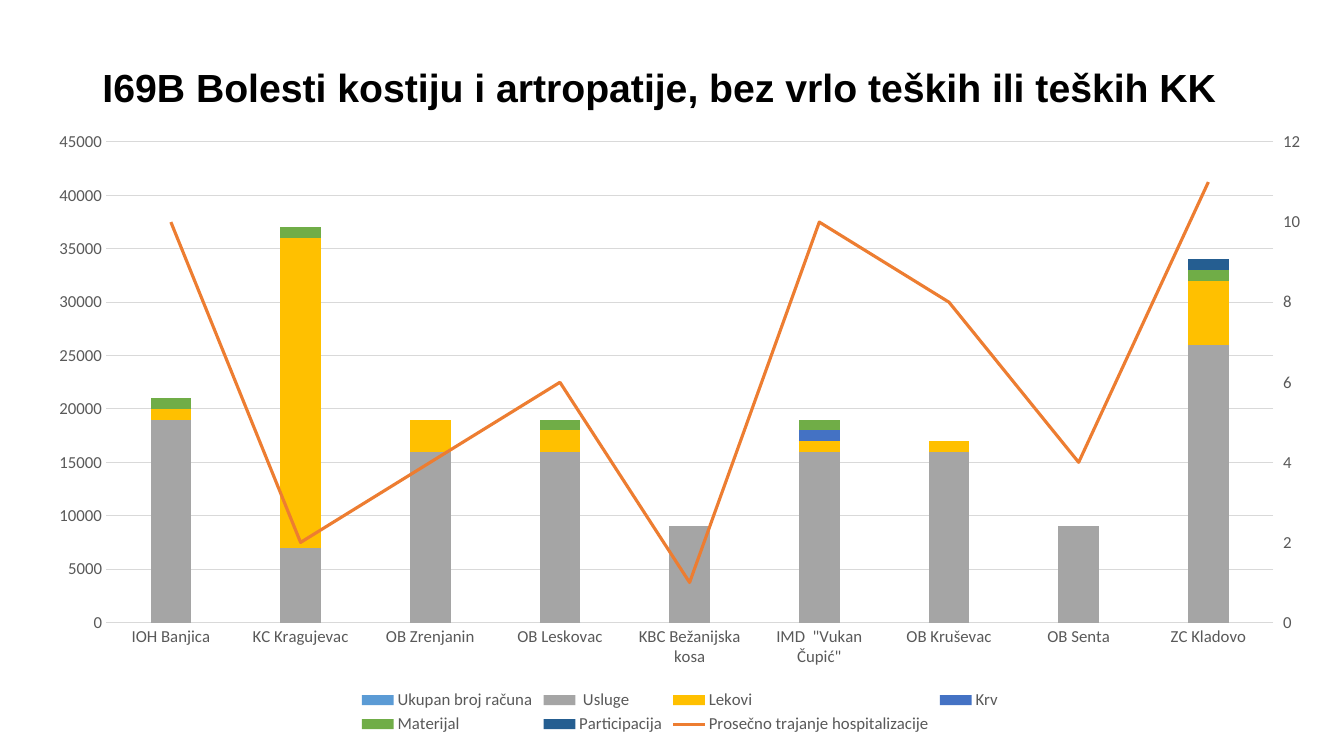
from copy import deepcopy

from lxml import etree
from pptx import Presentation
from pptx.chart.data import CategoryChartData
from pptx.dml.color import RGBColor
from pptx.enum.chart import XL_CHART_TYPE, XL_LEGEND_POSITION, XL_MARKER_STYLE, XL_TICK_MARK
from pptx.enum.text import MSO_ANCHOR, PP_ALIGN
from pptx.util import Emu, Pt

STACKED = XL_CHART_TYPE.COLUMN_STACKED
LEGEND_BOTTOM = XL_LEGEND_POSITION.BOTTOM
NO_MARKER = XL_MARKER_STYLE.NONE
NO_TICK = XL_TICK_MARK.NONE
MIDDLE = MSO_ANCHOR.MIDDLE
LEFT = PP_ALIGN.LEFT

EMU_PER_PX = 9525
CHART_NS = "http://schemas.openxmlformats.org/drawingml/2006/chart"
LABEL_GREY = "595959"
RULE_GREY = "D9D9D9"

HOSPITALS = ["IOH Banjica", "KC Kragujevac", "OB Zrenjanin", "OB Leskovac",
             "KBC Bežanijska kosa", 'IMD  "Vukan Čupić"', "OB Kruševac",
             "OB Senta", "ZC Kladovo"]
COSTS = [
    ("Ukupan broj računa", "5B9BD5", [0, 0, 0, 0, 0, 0, 0, 0, 0]),
    (" Usluge", "A5A5A5", [19000, 7000, 16000, 16000, 9000, 16000, 16000, 9000, 26000]),
    ("Lekovi", "FFC000", [1000, 29000, 3000, 2000, 0, 1000, 1000, 0, 6000]),
    ("Krv", "4472C4", [0, 0, 0, 0, 0, 1000, 0, 0, 0]),
    ("Materijal", "70AD47", [1000, 1000, 0, 1000, 0, 1000, 0, 0, 1000]),
    ("Participacija", "255E91", [0, 0, 0, 0, 0, 0, 0, 0, 1000]),
]
STAY = ("Prosečno trajanje hospitalizacije", "ED7D31", [10, 2, 4, 6, 1, 10, 8, 4, 11])


def px(length):
    """Turn pixels into EMU."""
    return Emu(length * EMU_PER_PX)


def colour(code):
    """Turn a hex string into a colour."""
    return RGBColor.from_string(code)


def set_font(font, size, code, name):
    """Set size, colour and typeface of a font."""
    font.size = Pt(size)
    font.color.rgb = colour(code)
    font.name = name


def set_line(line, code, width):
    """Set colour and width of a line."""
    line.color.rgb = colour(code)
    line.width = Pt(width)


def chart_node(parent, tag, value):
    """Append a chart element that holds one value."""
    return etree.SubElement(parent, f"{{{CHART_NS}}}{tag}", val=str(value))


def set_value(parent, tag, value):
    """Change the value of a chart element below the parent."""
    parent.find(f".//{{{CHART_NS}}}{tag}").set("val", str(value))


def add_heading(slide, left, top, width, height):
    """Place the title in the upper part of its box."""
    heading = slide.shapes.title
    heading.left, heading.top = px(left), px(top)
    heading.width, heading.height = px(width), px(height)
    frame = heading.text_frame
    frame.text = "I69B Bolesti kostiju i artropatije, bez vrlo teških ili teških KK"
    frame.word_wrap = True
    frame.vertical_anchor = MIDDLE
    frame.margin_bottom = px(49)
    paragraph = frame.paragraphs[0]
    paragraph.alignment = LEFT
    paragraph.line_spacing = 0.9
    paragraph.font.bold = True
    set_font(paragraph.font, 28, "000000", "Arial")


def format_axes(chart):
    """Style the hospital axis and the cost axis."""
    hospitals, costs = chart.category_axis, chart.value_axis
    for axis in (hospitals, costs):
        axis.major_tick_mark = axis.minor_tick_mark = NO_TICK
        set_font(axis.tick_labels.font, 12, LABEL_GREY, "Calibri")
    set_line(hospitals.format.line, RULE_GREY, 0.75)
    costs.minimum_scale, costs.maximum_scale, costs.major_unit = 0, 45000, 5000
    costs.format.line.fill.background()
    costs.has_major_gridlines = True
    set_line(costs.major_gridlines.format.line, RULE_GREY, 0.75)


def move_stay_to_right_axis(chart):
    """Turn the last series into a line on a second axis."""
    bars = chart.plots[0]._element
    stay = bars.findall(f"{{{CHART_NS}}}ser")[-1]
    for flag in stay.findall(f"{{{CHART_NS}}}invertIfNegative"):
        stay.remove(flag)
    lines = etree.Element(f"{{{CHART_NS}}}lineChart")
    bars.addnext(lines)
    chart_node(lines, "grouping", "standard")
    chart_node(lines, "varyColors", 0)
    lines.append(stay)
    chart_node(lines, "marker", 1)
    hospital_id, stay_id = 50010, 50020
    chart_node(lines, "axId", hospital_id)
    chart_node(lines, "axId", stay_id)

    cost_axis = chart.value_axis._element
    stay_axis = deepcopy(cost_axis)
    hidden_axis = deepcopy(chart.category_axis._element)
    cost_axis.addnext(stay_axis)
    stay_axis.addnext(hidden_axis)
    stay_axis.remove(stay_axis.find(f"{{{CHART_NS}}}majorGridlines"))
    for tag, value in (("axId", stay_id), ("crossAx", hospital_id), ("axPos", "r"),
                       ("majorTickMark", "out"), ("crosses", "max"),
                       ("max", 12), ("majorUnit", 2)):
        set_value(stay_axis, tag, value)
    for tag, value in (("axId", hospital_id), ("crossAx", stay_id), ("delete", 1)):
        set_value(hidden_axis, tag, value)


def add_cost_chart(slide, left, top, width, height):
    """Place the stacked costs with the length of stay as a line."""
    data = CategoryChartData()
    data.categories = HOSPITALS
    for name, _, values in COSTS + [STAY]:
        data.add_series(name, values)
    chart = slide.shapes.add_chart(STACKED, px(left), px(top), px(width), px(height), data).chart
    chart.has_title = False
    set_font(chart.font, 10, "000000", "Calibri")
    chart.has_legend = True
    chart.legend.position = LEGEND_BOTTOM
    chart.legend.include_in_layout = False
    set_font(chart.legend.font, 12, LABEL_GREY, "Calibri")
    format_axes(chart)
    move_stay_to_right_axis(chart)

    cost_plot, stay_plot = chart.plots
    cost_plot.gap_width, cost_plot.overlap = 219, 100
    cost_plot.vary_by_categories = False
    for series, (_, code, _) in zip(cost_plot.series, COSTS):
        series.format.fill.solid()
        series.format.fill.fore_color.rgb = colour(code)
    stay = stay_plot.series[0]
    stay.smooth = False
    stay.marker.style = NO_MARKER
    set_line(stay.format.line, STAY[1], 2.25)


def main():
    """Build and save the slide."""
    deck = Presentation()
    deck.slide_width, deck.slide_height = px(1280), px(720)
    slide = deck.slides.add_slide(deck.slide_layouts[5])
    add_heading(slide, 88, 38, 1104, 139)
    add_cost_chart(slide, 32, 114, 1231, 589)
    deck.save("out.pptx")


if __name__ == "__main__":
    main()
